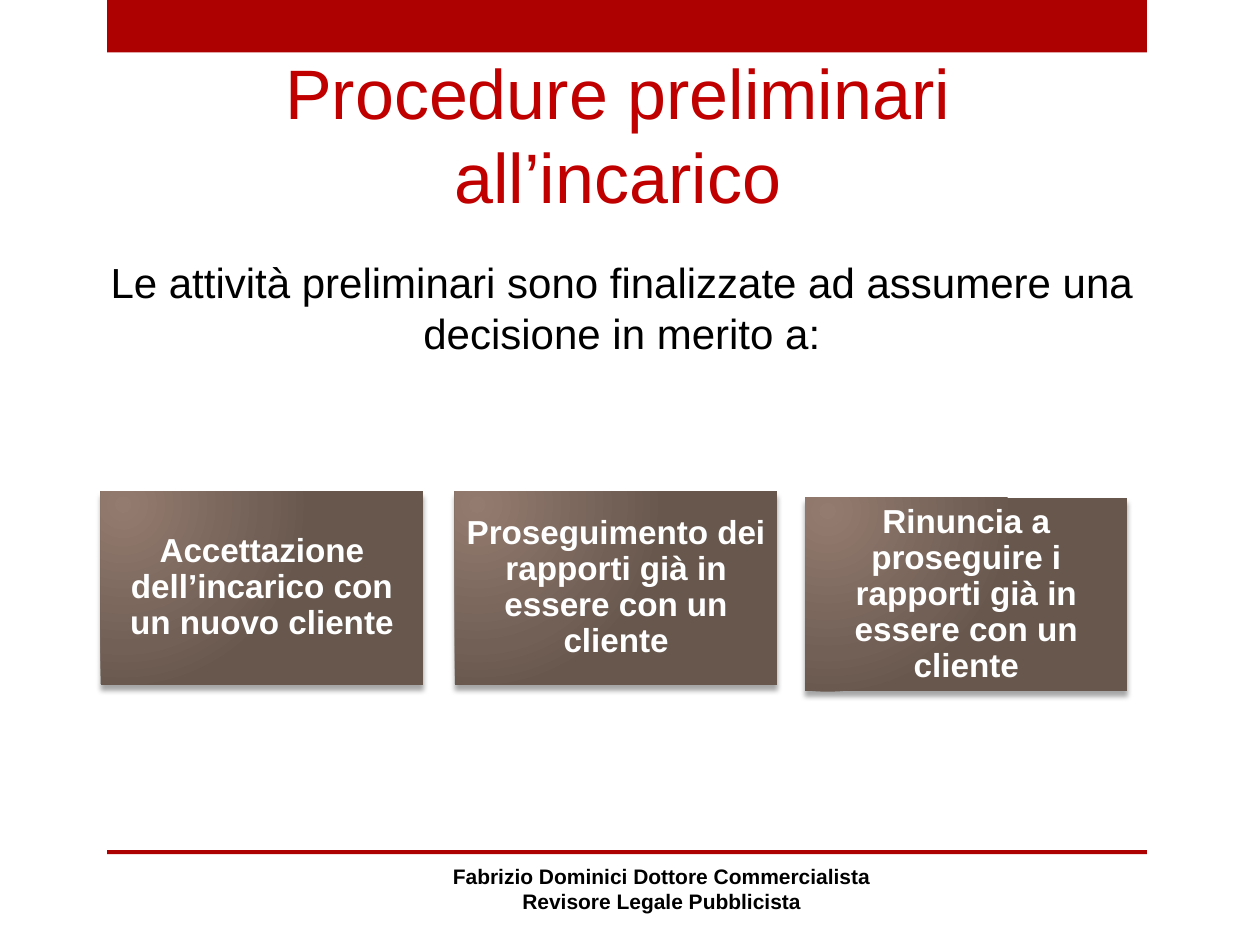
from dataclasses import dataclass

from lxml.etree import SubElement
from pptx import Presentation
from pptx.dml.color import RGBColor
from pptx.enum.shapes import MSO_SHAPE
from pptx.enum.text import MSO_ANCHOR, MSO_AUTO_SIZE, PP_ALIGN
from pptx.oxml import parse_xml
from pptx.oxml.ns import nsdecls, qn
from pptx.util import Cm, Pt

HUES = {
    "bar": "AD0101",
    "title": "C00000",
    "text": "000000",
    "light": "FFFFFF",
    "shade": "000000",
}
BROWNS = {0: "947B6F", 76: "726056", 100: "67574D"}
CARD_W, CARD_H = 6.5, 3.91


@dataclass
class Card:
    left: float
    top: float
    text: str


CARDS = [
    Card(2.03, 9.9, "Accettazione dell’incarico con un nuovo cliente"),
    Card(9.17, 9.9, "Proseguimento dei rapporti già in essere con un cliente"),
    Card(16.23, 10.03, "Rinuncia a proseguire i rapporti già in essere con un cliente"),
]


def place(shape, left: float, top: float, width: float, height: float) -> None:
    shape.left, shape.top = Cm(left), Cm(top)
    shape.width, shape.height = Cm(width), Cm(height)


def write(shape, text: str, *, size: float, hue: str, bold: bool = False,
          anchor=MSO_ANCHOR.MIDDLE, inset: float | None = None,
          line: float | None = None) -> None:
    """Fill a shape with centred text, one paragraph per line of text."""
    frame = shape.text_frame
    frame.text = text
    frame.word_wrap = True
    frame.auto_size = MSO_AUTO_SIZE.NONE
    frame.vertical_anchor = anchor
    if inset is not None:
        frame.margin_left = frame.margin_right = Cm(inset)
        frame.margin_top = frame.margin_bottom = Cm(inset)
    for para in frame.paragraphs:
        para.alignment = PP_ALIGN.CENTER
        if line is not None:
            para.line_spacing = line
        for run in para.runs:
            font = run.font
            font.name, font.size, font.bold = "Arial", Pt(size), bold
            font.color.rgb = RGBColor.from_string(HUES[hue])


def add_rect(slide, left: float, top: float, width: float, height: float):
    rect = slide.shapes.add_shape(
        MSO_SHAPE.RECTANGLE, Cm(left), Cm(top), Cm(width), Cm(height))
    rect.line.fill.background()
    rect.shadow.inherit = False
    return rect


def add_bar(slide, top: float, height: float) -> None:
    bar = add_rect(slide, 2.16, top, 20.96, height)
    bar.fill.solid()
    bar.fill.fore_color.rgb = RGBColor.from_string(HUES["bar"])


def add_glow(shape) -> None:
    """Give a shape a round gradient, brightest near its top left corner."""
    stops = "".join(
        f'<a:gs pos="{pos * 1000}"><a:srgbClr val="{hue}"/></a:gs>'
        for pos, hue in BROWNS.items())
    grad = parse_xml(
        f'<a:gradFill {nsdecls("a")} rotWithShape="1"><a:gsLst>{stops}</a:gsLst>'
        '<a:path path="circle"><a:fillToRect l="15000" t="15000" '
        'r="100000" b="100000"/></a:path></a:gradFill>')
    shape.fill.background()
    props = shape.element.spPr
    props.replace(props.find(qn("a:noFill")), grad)


def add_shade(shape) -> None:
    effects = shape.element.spPr.find(qn("a:effectLst"))
    shade = SubElement(
        effects, qn("a:outerShdw"), blurRad=str(Pt(3)), dist=str(Pt(3)),
        dir="5400000", rotWithShape="0")
    hue = SubElement(shade, qn("a:srgbClr"), val=HUES["shade"])
    SubElement(hue, qn("a:alpha"), val="35000")


def add_card(slide, card: Card) -> None:
    rect = add_rect(slide, card.left, card.top, CARD_W, CARD_H)
    add_glow(rect)
    add_shade(rect)
    write(rect, card.text, size=19, hue="light", bold=True, inset=0.2, line=0.9)


def drop_bullet(para) -> None:
    props = para._p.get_or_add_pPr()
    props.set("marL", "0")
    props.set("indent", "0")
    SubElement(props, qn("a:buNone"))


def main() -> None:
    deck = Presentation()
    deck.slide_width, deck.slide_height = Cm(25.4), Cm(19.05)
    slide = deck.slides.add_slide(deck.slide_layouts[1])

    add_bar(slide, 0, 1.06)
    add_bar(slide, 17.14, 0.08)

    title = slide.shapes.title
    place(title, 3.94, 0.89, 17.02, 3.63)
    write(title, "Procedure preliminari all’incarico", size=40, hue="title",
          anchor=MSO_ANCHOR.BOTTOM)

    body = slide.placeholders[1]
    place(body, 1.78, 0.48, 21.51, 11.43)
    write(body, "Le attività preliminari sono finalizzate ad assumere una "
          "decisione in merito a:", size=24, hue="text")
    drop_bullet(body.text_frame.paragraphs[0])

    foot = slide.shapes.add_textbox(Cm(8.69), Cm(17.12), Cm(9.3), Cm(1.6))
    write(foot, "Fabrizio Dominici Dottore Commercialista\n"
          "Revisore Legale Pubblicista", size=12, hue="text", bold=True)

    for card in CARDS:
        add_card(slide, card)

    deck.save("out.pptx")


if __name__ == "__main__":
    main()
